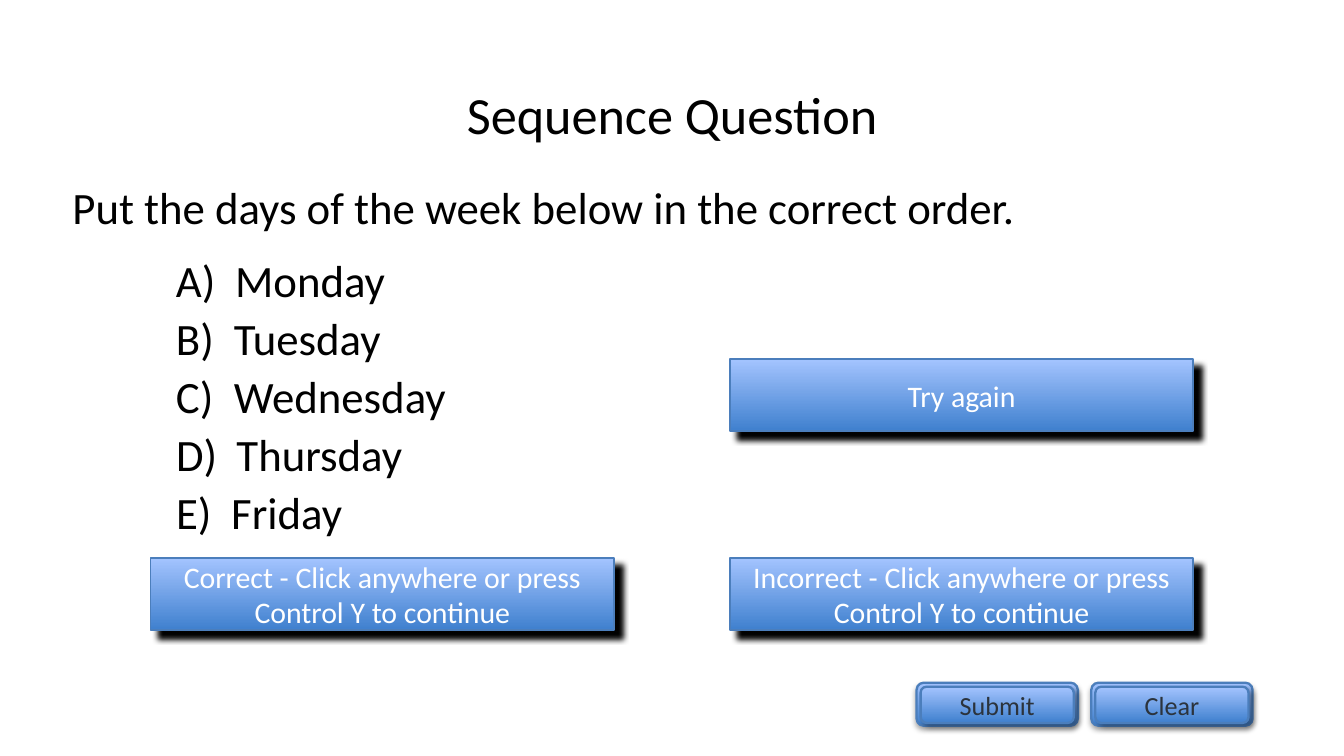
from pptx import Presentation
from pptx.dml.color import RGBColor
from pptx.enum.shapes import MSO_SHAPE
from pptx.enum.text import MSO_ANCHOR, MSO_AUTO_SIZE, PP_ALIGN
from pptx.oxml import parse_xml
from pptx.oxml.ns import nsdecls, qn
from pptx.util import Inches, Pt

# Content
TITLE = "Sequence Question"
QUESTION = "Put the days of the week below in the correct order."
# letter, day, width of the letter box
OPTIONS = [
    ("A)", "Monday", 0.44),
    ("B)", "Tuesday", 0.43),
    ("C)", "Wednesday", 0.43),
    ("D)", "Thursday", 0.45),
    ("E)", "Friday", 0.41),
]
FIRST_OPTION_TOP, LAST_OPTION_TOP = 1.88, 3.61
# text, left, top
FEEDBACK = [
    ("Correct - Click anywhere or press Control Y to continue", 1.12, 4.15),
    ("Incorrect - Click anywhere or press Control Y to continue", 5.43, 4.15),
    ("Try again", 5.43, 2.67),
]
BUTTONS = ["Submit", "Clear"]

THEME = {
    "font": "Calibri",
    "text": "000000", "feedback_text": "FFFFFF", "button_text": "2B333C",
    "bottom": "3F80CE", "top": "A4C4FF", "line": "4B7EBC", "shadow": "000000",
    "title_size": 28, "body_size": 24, "feedback_size": 16, "button_size": 14,
}


def color(name):
    return RGBColor.from_string(THEME[name])


def write(box, text, size="body_size", ink="text", align=PP_ALIGN.LEFT,
          anchor=MSO_ANCHOR.MIDDLE, wrap=True, inset=(0, 0)):
    frame = box.text_frame
    frame.word_wrap = wrap
    frame.vertical_anchor = anchor
    frame.margin_left = frame.margin_right = Inches(inset[0])
    frame.margin_top = frame.margin_bottom = Inches(inset[1])
    para = frame.paragraphs[0]
    para.alignment = align
    span = para.add_run()
    span.text = text
    span.font.name = THEME["font"]
    span.font.size = Pt(THEME[size])
    span.font.color.rgb = color(ink)
    return frame


def add_text(shapes, text, left, top, width, height, **style):
    box = shapes.add_textbox(Inches(left), Inches(top), Inches(width), Inches(height))
    return write(box, text, **style)


def add_panel(shapes, kind, left, top, width, height, line_width, opacity, distance, angle):
    panel = shapes.add_shape(kind, Inches(left), Inches(top), Inches(width), Inches(height))
    panel.fill.gradient()
    panel.fill.gradient_angle = 90
    for stop, name in zip(panel.fill.gradient_stops, ("bottom", "top")):
        stop.color.rgb = color(name)
    panel.line.color.rgb = color("line")
    panel.line.width = Pt(line_width)
    panel.shadow.inherit = False
    effects = panel.element.spPr.find(qn("a:effectLst"))
    effects.append(parse_xml(
        f'<a:outerShdw {nsdecls("a")} blurRad="{Pt(3.1)}" dist="{Pt(distance)}" '
        f'dir="{angle * 60000}" algn="ctr" rotWithShape="0">'
        f'<a:srgbClr val="{THEME["shadow"]}"><a:alpha val="{opacity * 1000}"/></a:srgbClr>'
        '</a:outerShdw>'))
    return panel


# A 16:9 page
deck = Presentation()
deck.slide_width = Inches(10)
deck.slide_height = deck.slide_width * 9 // 16
page = deck.slides.add_slide(deck.slide_layouts[6])

# Answer options: a letter and a day in each group
pitch = (LAST_OPTION_TOP - FIRST_OPTION_TOP) / (len(OPTIONS) - 1)
for index, (letter, day, letter_width) in enumerate(OPTIONS):
    option = page.shapes.add_group_shape().shapes
    top = FIRST_OPTION_TOP + index * pitch
    day_left = 1.31 + letter_width
    add_text(option, letter, 1.31, top, letter_width, 0.4)
    add_text(option, day, day_left, top, 8.63 - day_left, 0.4)

# Feedback panels
for text, left, top in FEEDBACK:
    panel = add_panel(page.shapes, MSO_SHAPE.RECTANGLE, left, top, 3.45, 0.54,
                      line_width=1, opacity=100, distance=5.7, angle=45)
    write(panel, text, size="feedback_size", ink="feedback_text", align=PP_ALIGN.CENTER)

# Buttons: an outer frame and an inner face in each group
for index, label in enumerate(BUTTONS):
    button = page.shapes.add_group_shape().shapes
    left = 6.82 + index * 1.3
    add_panel(button, MSO_SHAPE.ROUNDED_RECTANGLE, left, 5.08, 1.2, 0.32,
              line_width=1.25, opacity=35, distance=1.8, angle=90)
    face = add_panel(button, MSO_SHAPE.ROUNDED_RECTANGLE, left + 0.03, 5.11, 1.14, 0.27,
                     line_width=1.25, opacity=35, distance=2.9, angle=45)
    write(face, label, size="button_size", ink="button_text", align=PP_ALIGN.CENTER)

# Title and question
add_text(page.shapes, TITLE, 0.69, 0.3, 8.62, 1.09, size="title_size", align=PP_ALIGN.CENTER)
question = add_text(page.shapes, QUESTION, 0.44, 1.29, 7.28, 0.5,
                    anchor=MSO_ANCHOR.TOP, wrap=False, inset=(0.1, 0.05))
question.auto_size = MSO_AUTO_SIZE.SHAPE_TO_FIT_TEXT

deck.save("out.pptx")
